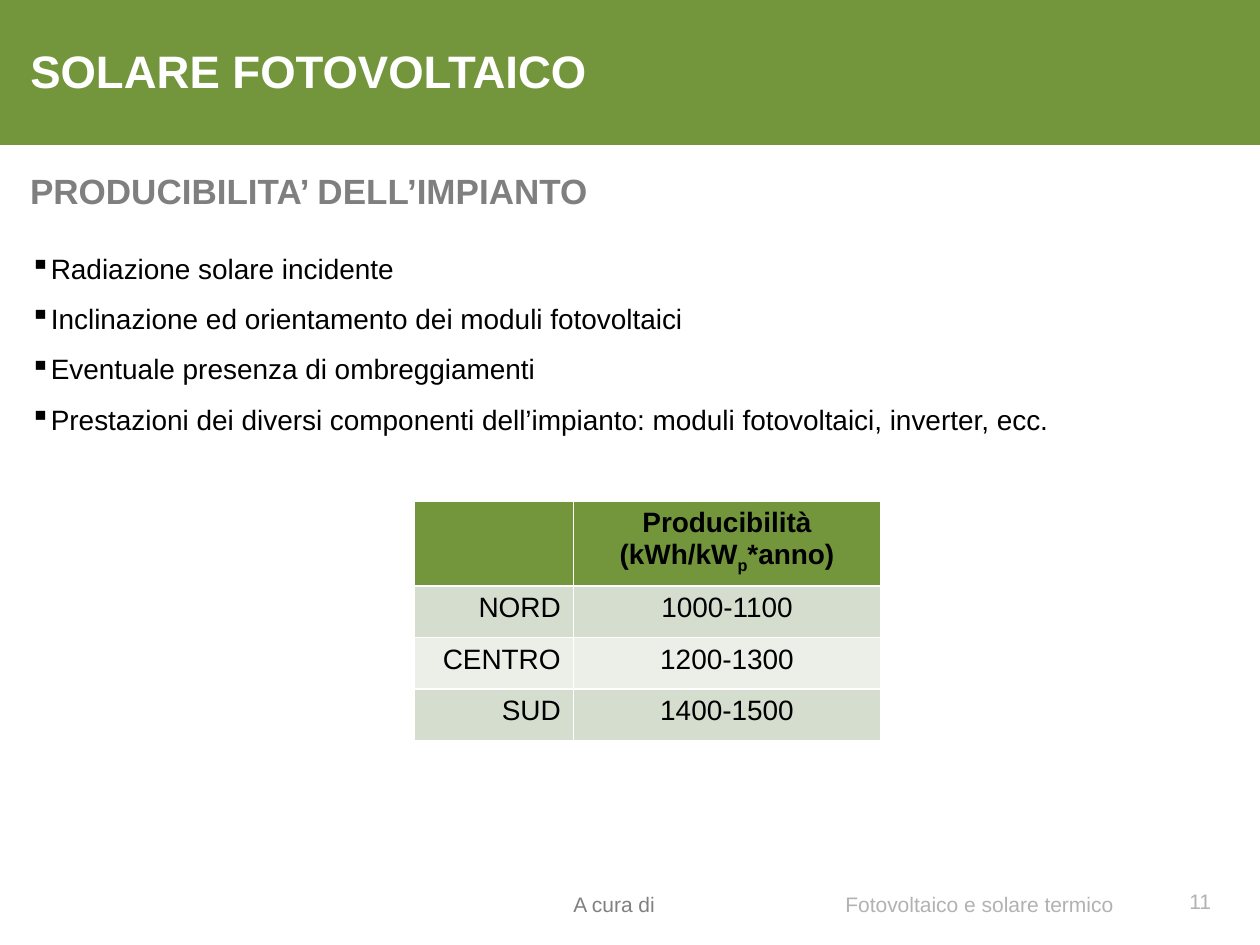
"""Build the slide on photovoltaic plant producibility."""
from lxml.etree import SubElement
from pptx import Presentation
from pptx.dml.color import RGBColor
from pptx.enum.shapes import MSO_SHAPE as Shape
from pptx.enum.text import MSO_ANCHOR as Anchor, PP_ALIGN as Align
from pptx.oxml.ns import qn
from pptx.util import Inches, Pt

COLORS = {
    "green": "73963D", "white": "FFFFFF", "black": "000000", "heading": "7F7F7F",
    "author": "808080", "footer": "B2B2B2", "dark_row": "D5DDCE", "light_row": "EBEFE8",
}
FACTORS = [
    "Radiazione solare incidente",
    "Inclinazione ed orientamento dei moduli fotovoltaici",
    "Eventuale presenza di ombreggiamenti",
    "Prestazioni dei diversi componenti dell’impianto: moduli fotovoltaici, inverter, ecc.",
]
HEADER = ["Producibilità (kWh/kW", "p", "*anno)"]
YIELDS = [("NORD", "1000-1100"), ("CENTRO", "1200-1300"), ("SUD", "1400-1500")]


class SlideBuilder:
    def __init__(self, presentation, font="Arial"):
        self.font = font
        self.slide = presentation.slides.add_slide(presentation.slide_layouts[5])

    def color(self, name):
        return RGBColor.from_string(COLORS[name])

    def fill(self, item, name):
        item.fill.solid()
        item.fill.fore_color.rgb = self.color(name)

    def run(self, paragraph, text, size, color, bold=False, align=Align.LEFT):
        paragraph.alignment = align
        run = paragraph.add_run()
        run.text = text
        run.font.name = self.font
        run.font.size = Pt(size)
        run.font.bold = bold
        run.font.color.rgb = self.color(color)
        return run

    def frame(self, shape, margins, anchor):
        frame = shape.text_frame
        frame.word_wrap = True
        frame.vertical_anchor = anchor
        (frame.margin_left, frame.margin_top,
         frame.margin_right, frame.margin_bottom) = map(Inches, margins)
        return frame

    def title(self, text, box):
        shape = self.slide.shapes.title
        shape.left, shape.top, shape.width, shape.height = map(Inches, box)
        frame = self.frame(shape, (0.1, 0, 0.1, 0), Anchor.MIDDLE)
        self.run(frame.paragraphs[0], text, 26, "white", bold=True)

    def rectangle(self, box, color):
        shape = self.slide.shapes.add_shape(Shape.RECTANGLE, *map(Inches, box))
        shape.shadow.inherit = False
        shape.line.fill.background()
        self.fill(shape, color)
        return shape

    def band(self, box):
        shape = self.rectangle(box, "green")
        self.slide.shapes.title.element.addprevious(shape.element)

    def text(self, text, box, size, color, bold=False, align=Align.LEFT,
             margins=(0.1, 0.05, 0.1, 0.05), anchor=Anchor.MIDDLE):
        shape = self.slide.shapes.add_textbox(*map(Inches, box))
        frame = self.frame(shape, margins, anchor)
        self.run(frame.paragraphs[0], text, size, color, bold, align)

    def bullets(self, items, box):
        frame = self.frame(self.rectangle(box, "white"), (0.1, 0, 0.1, 0), Anchor.TOP)
        for index, item in enumerate(items):
            paragraph = frame.add_paragraph() if index else frame.paragraphs[0]
            paragraph.line_spacing = 1.5
            properties = paragraph._p.get_or_add_pPr()
            properties.set("marL", str(Inches(0.14)))
            properties.set("indent", str(-Inches(0.14)))
            SubElement(properties, qn("a:buChar")).set("char", "▪")
            self.run(paragraph, item, 16, "black")

    def table(self, header, rows, box, widths, heights):
        shape = self.slide.shapes.add_table(len(rows) + 1, 2, *map(Inches, box))
        table = shape.table
        for column, width in zip(table.columns, widths):
            column.width = Inches(width)
        for row, height in zip(table.rows, heights):
            row.height = Inches(height)
        for column in range(2):
            self.fill(table.cell(0, column), "green")
        paragraph = table.cell(0, 1).text_frame.paragraphs[0]
        runs = [self.run(paragraph, part, 16, "black", True, Align.CENTER) for part in header]
        runs[1].font._element.set("baseline", "-25000")
        for index, values in enumerate(rows, 1):
            for column, align in enumerate((Align.RIGHT, Align.CENTER)):
                cell = table.cell(index, column)
                self.fill(cell, "dark_row" if index % 2 else "light_row")
                self.run(cell.text_frame.paragraphs[0], values[column], 16, "black", align=align)


def main():
    presentation = Presentation()
    presentation.slide_width, presentation.slide_height = Inches(10), Inches(7.5)
    builder = SlideBuilder(presentation)
    builder.band((0, 0, 10, 1.15))
    builder.title("SOLARE FOTOVOLTAICO", (0.14, 0.34, 9, 0.44))
    builder.text("PRODUCIBILITA’ DELL’IMPIANTO", (0.14, 1.3, 9, 0.84), 20, "heading",
                 bold=True, anchor=Anchor.TOP)
    builder.bullets(FACTORS, (0.14, 1.86, 9.46, 1.62))
    builder.table(HEADER, YIELDS, (3.29, 3.98, 3.7, 1.88), (1.26, 2.44), [0.65] + [0.41] * 3)
    footer_margins = (0, 0.05, 0.1, 0)
    builder.text("A cura di", (4.55, 6.95, 2.2, 0.4), 12, "author", margins=footer_margins)
    builder.text("Fotovoltaico e solare termico", (6.71, 6.95, 2.43, 0.4), 12, "footer",
                 margins=footer_margins)
    builder.text("11", (9.14, 6.95, 0.57, 0.4), 12, "footer", align=Align.RIGHT)
    presentation.save("out.pptx")


if __name__ == "__main__":
    main()
